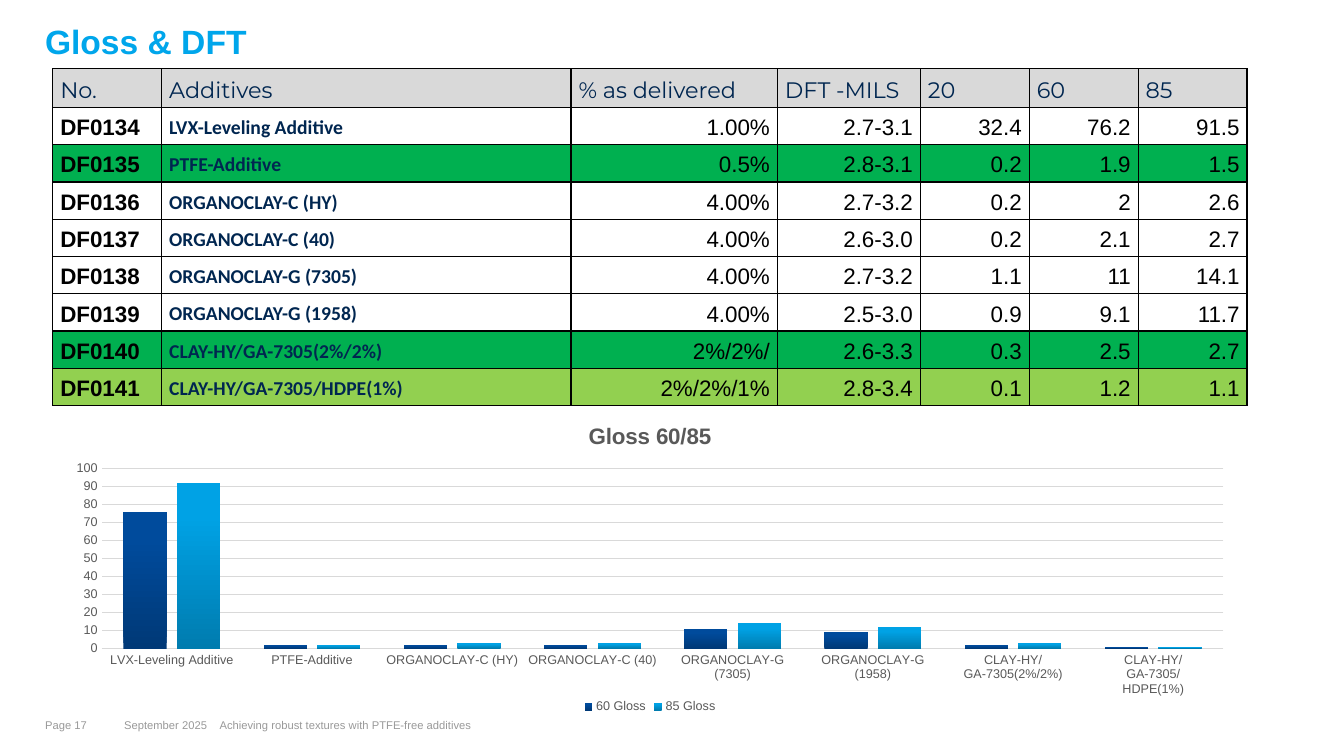
from lxml import etree
from pptx import Presentation
from pptx.chart.data import CategoryChartData
from pptx.dml.color import RGBColor
from pptx.enum.chart import XL_CHART_TYPE, XL_LEGEND_POSITION, XL_TICK_MARK
from pptx.enum.text import MSO_ANCHOR, PP_ALIGN
from pptx.oxml.ns import qn
from pptx.util import Pt

COLUMNS = XL_CHART_TYPE.COLUMN_CLUSTERED
BOTTOM = XL_LEGEND_POSITION.BOTTOM
NO_TICK = XL_TICK_MARK.NONE
MIDDLE = MSO_ANCHOR.MIDDLE
LEFT, RIGHT = PP_ALIGN.LEFT, PP_ALIGN.RIGHT

BLACK, WHITE, NAVY = "000000", "FFFFFF", "002650"
GREEN, LIME, SILVER, SLATE = "00B050", "92D050", "D9D9D9", "595959"

TITLE_FONT = dict(name="Arial", size=Pt(24), bold=True, color="00A6EB")
FOOTER_FONT = dict(name="Arial", size=Pt(8), color="999999")
HEADER_FONT = dict(name="Montserrat", size=Pt(16), bold=False, color=NAVY)
NUMBER_FONT = dict(name="Arial", size=Pt(16), bold=False, color=BLACK)
CODE_FONT = dict(NUMBER_FONT, bold=True)
ADDITIVE_FONT = dict(name="Calibri", size=Pt(14), bold=True, color=NAVY)
CHART_TITLE_FONT = dict(name="Arial", size=Pt(16), bold=True, color=SLATE)
CHART_FONT = dict(name="Arial", size=Pt(9), bold=False, color=SLATE)

HEADER = ["No.", "Additives", "% as delivered", "DFT -MILS", "20", "60", "85"]
SAMPLES = [
    ["DF0134", "LVX-Leveling Additive", "1.00%", "2.7-3.1", "32.4", "76.2", "91.5"],
    ["DF0135", "PTFE-Additive", "0.5%", "2.8-3.1", "0.2", "1.9", "1.5"],
    ["DF0136", "ORGANOCLAY-C (HY)", "4.00%", "2.7-3.2", "0.2", "2", "2.6"],
    ["DF0137", "ORGANOCLAY-C (40)", "4.00%", "2.6-3.0", "0.2", "2.1", "2.7"],
    ["DF0138", "ORGANOCLAY-G (7305)", "4.00%", "2.7-3.2", "1.1", "11", "14.1"],
    ["DF0139", "ORGANOCLAY-G (1958)", "4.00%", "2.5-3.0", "0.9", "9.1", "11.7"],
    ["DF0140", "CLAY-HY/GA-7305(2%/2%)", "2%/2%/", "2.6-3.3", "0.3", "2.5", "2.7"],
    ["DF0141", "CLAY-HY/GA-7305/HDPE(1%)", "2%/2%/1%", "2.8-3.4", "0.1", "1.2", "1.1"],
]
ROW_FILLS = {0: SILVER, 2: GREEN, 7: GREEN, 8: LIME}
COL_WIDTHS = [77.8, 292.4, 147.4, 102.2, 77.8, 77.8, 77.8]
HEADER_HEIGHT = 27.8
# series name, table column, bottom colour, top colour
GLOSS_SERIES = [
    ("60 Gloss", 5, "003977", "004B9C"),
    ("85 Gloss", 6, "007CAF", "00A2E5"),
]


def rgb(value):
    return RGBColor.from_string(value)


def set_font(font, fmt):
    for key, value in fmt.items():
        if key == "color":
            font.color.rgb = rgb(value)
        else:
            setattr(font, key, value)


def add_text(slide, box, text, fmt, top_inset=0):
    sp = slide.shapes.add_textbox(*map(Pt, box))
    tf = sp.text_frame
    tf.word_wrap = True
    tf.margin_left = tf.margin_right = tf.margin_bottom = 0
    tf.margin_top = Pt(top_inset)
    p = tf.paragraphs[0]
    r = p.add_run()
    r.text = text
    set_font(r.font, fmt)
    return p


def set_borders(cell, widths):
    """Draw black borders; widths maps L, R, T, B to points."""
    tc_pr = cell._tc.get_or_add_tcPr()
    for side, width in widths.items():
        ln = etree.SubElement(tc_pr, qn("a:ln" + side), w=str(Pt(width)))
        fill = etree.SubElement(ln, qn("a:solidFill"))
        etree.SubElement(fill, qn("a:srgbClr"), val=BLACK)


def fill_cell(cell, row, col, text):
    set_borders(cell, {
        "L": 1.5 if col == 2 else 1,
        "R": 1.5 if col == 1 else 1,
        "T": 1.5 if row == 1 else 1,
        "B": 1.5 if row == 0 else 1,
    })
    cell.fill.solid()
    cell.fill.fore_color.rgb = rgb(ROW_FILLS.get(row, WHITE))
    cell.vertical_anchor = MIDDLE
    cell.margin_left = cell.margin_right = Pt(5.4)
    cell.margin_top = cell.margin_bottom = Pt(0 if row and col == 1 else 0.7)
    p = cell.text_frame.paragraphs[0]
    p.alignment = RIGHT if row and col > 1 else LEFT
    p.line_spacing = 1.15
    p.space_after = Pt(10 if row else 6)
    r = p.add_run()
    r.text = text
    body_font = {0: CODE_FONT, 1: ADDITIVE_FONT}.get(col, NUMBER_FONT)
    set_font(r.font, body_font if row else HEADER_FONT)


def add_gloss_table(slide, box):
    rows = [HEADER] + SAMPLES
    table = slide.shapes.add_table(len(rows), len(HEADER), *map(Pt, box)).table
    table.first_row = table.horz_banding = False
    for column, width in zip(table.columns, COL_WIDTHS):
        column.width = Pt(width)
    sample_height = (box[3] - HEADER_HEIGHT) / len(SAMPLES)
    for i, texts in enumerate(rows):
        table.rows[i].height = Pt(sample_height if i else HEADER_HEIGHT)
        for j, text in enumerate(texts):
            fill_cell(table.cell(i, j), i, j, text)


def add_gloss_chart(slide, box):
    data = CategoryChartData()
    data.categories = [sample[1] for sample in SAMPLES]
    for name, col, _, _ in GLOSS_SERIES:
        data.add_series(name, [round(float(sample[col])) for sample in SAMPLES])
    chart = slide.shapes.add_chart(COLUMNS, *map(Pt, box), data).chart
    set_font(chart.font, CHART_FONT)

    chart.has_title = True
    r = chart.chart_title.text_frame.paragraphs[0].add_run()
    r.text = "Gloss 60/85"
    set_font(r.font, CHART_TITLE_FONT)
    chart.chart_title.include_in_layout = False

    chart.has_legend = True
    chart.legend.position = BOTTOM
    chart.legend.include_in_layout = False
    set_font(chart.legend.font, CHART_FONT)

    for axis in (chart.category_axis, chart.value_axis):
        axis.major_tick_mark = axis.minor_tick_mark = NO_TICK
        set_font(axis.tick_labels.font, CHART_FONT)
    cat_line = chart.category_axis.format.line
    cat_line.color.rgb = rgb(SILVER)
    cat_line.width = Pt(1)
    val_axis = chart.value_axis
    val_axis.minimum_scale, val_axis.maximum_scale = 0, 100
    val_axis.major_unit = 10
    val_axis.format.line.fill.background()
    grid = val_axis.major_gridlines.format.line
    grid.color.rgb = rgb(SILVER)
    grid.width = Pt(0.75)

    plot = chart.plots[0]
    plot.vary_by_categories = False
    plot.gap_width, plot.overlap = 100, -24
    for series, (_, _, *colors) in zip(plot.series, GLOSS_SERIES):
        fill = series.format.fill
        fill.gradient()
        fill.gradient_angle = 90
        for stop, color, position in zip(fill.gradient_stops, colors, (0, 0.8)):
            stop.color.rgb = rgb(color)
            stop.position = position


def add_footer(slide, left, top):
    for offset, width, text in [
        (0, 49, "Page 17"),
        (56.4, 63, "September 2025"),
        (124.6, 646, "Achieving robust textures with PTFE-free additives"),
    ]:
        add_text(slide, (left + offset, top, width, 11.5), text, FOOTER_FONT)


def main():
    prs = Presentation()
    prs.slide_width, prs.slide_height = Pt(960), Pt(540)
    slide = prs.slides.add_slide(prs.slide_layouts[6])
    title = add_text(slide, (32.2, 15.1, 895.7, 33.8), "Gloss & DFT", TITLE_FONT, 2.9)
    title.line_spacing = 0.9
    left, width = 37.7, sum(COL_WIDTHS)
    add_gloss_table(slide, (left, 49, width, 240.8))
    add_footer(slide, 32.2, 513)
    add_gloss_chart(slide, (left, 289.8, width, 223.2))
    prs.save("out.pptx")


if __name__ == "__main__":
    main()
